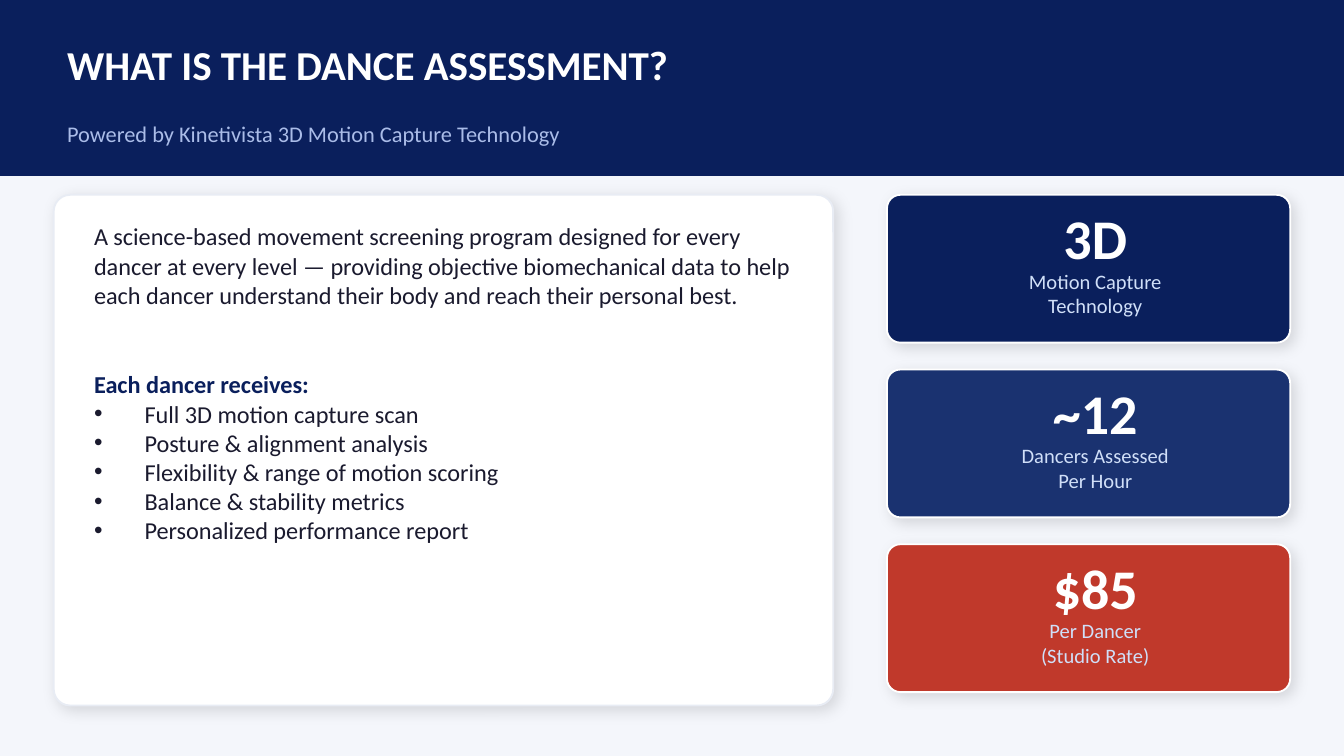
import lxml.etree
import pptx
import pptx.dml.color
import pptx.enum.shapes
import pptx.enum.text
import pptx.oxml.ns
import pptx.util

Pt = pptx.util.Pt
qn = pptx.oxml.ns.qn
SHAPE = pptx.enum.shapes.MSO_SHAPE
ALIGN = pptx.enum.text.PP_ALIGN
ANCHOR = pptx.enum.text.MSO_ANCHOR

COLORS = {
    "navy": "0A1F5C",
    "blue": "1A3270",
    "red": "C0392B",
    "white": "FFFFFF",
    "page": "F4F6FB",
    "border": "E8ECF4",
    "ink": "1A1A2E",
    "subtitle": "AABCE8",
    "caption": "D0DFF8",
    "shadow": "000000",
}
FONT = "Calibri"
RECEIVED = [
    "Full 3D motion capture scan",
    "Posture & alignment analysis",
    "Flexibility & range of motion scoring",
    "Balance & stability metrics",
    "Personalized performance report",
]
STATS = [
    ("3D", ["Motion Capture", "Technology"], "navy"),
    ("~12", ["Dancers Assessed", "Per Hour"], "blue"),
    ("$85", ["Per Dancer", "(Studio Rate)"], "red"),
]


def rgb(name):
    """Return the named palette colour."""
    return pptx.dml.color.RGBColor.from_string(COLORS[name])


def place(shape, box):
    """Move a shape to a box of left, top, width and height in points."""
    shape.left, shape.top, shape.width, shape.height = map(Pt, box)


def prepare_frame(shape, anchor=ANCHOR.TOP):
    """Make a wrapping text frame without margins or autofit."""
    frame = shape.text_frame
    frame.margin_left = frame.margin_top = frame.margin_right = frame.margin_bottom = 0
    frame.auto_size = pptx.enum.text.MSO_AUTO_SIZE.NONE
    frame.word_wrap = True
    frame.vertical_anchor = anchor
    return frame


def add_line(frame, index, text, size, color, bold=False, align=ALIGN.LEFT):
    """Write one paragraph with a single run."""
    para = frame.paragraphs[0] if index == 0 else frame.add_paragraph()
    para.alignment = align
    para.space_before = Pt(0)
    span = para.add_run()
    span.text = text
    span.font.name, span.font.size, span.font.bold = FONT, Pt(size), bold
    span.font.color.rgb = rgb(color)
    return para


def set_bullet(para, mark=None, indent=0):
    """Give a paragraph a hanging bullet, or none."""
    properties = para._p.get_or_add_pPr()
    properties.set("marL", str(Pt(indent)))
    properties.set("indent", str(-Pt(indent)))
    if mark:
        lxml.etree.SubElement(properties, qn("a:buChar"), char=mark)
    else:
        lxml.etree.SubElement(properties, qn("a:buNone"))


def add_text(page, box, lines, size, color, bold=False, align=ALIGN.LEFT, anchor=ANCHOR.TOP):
    """Add a text box with one paragraph for each line."""
    frame = prepare_frame(page.shapes.add_textbox(*map(Pt, box)), anchor)
    for index, text in enumerate(lines):
        add_line(frame, index, text, size, color, bold, align)


def add_panel(page, kind, box, fill, line):
    """Add a filled shape with a thin outline and no shadow."""
    panel = page.shapes.add_shape(kind, *map(Pt, box))
    panel.fill.solid()
    panel.fill.fore_color.rgb = rgb(fill)
    panel.line.color.rgb = rgb(line)
    panel.line.width = Pt(1)
    panel.shadow.inherit = False
    return panel


def add_card(page, box, fill, line, radius=8.8):
    """Add a rounded panel with a soft shadow."""
    card = add_panel(page, SHAPE.ROUNDED_RECTANGLE, box, fill, line)
    card.adjustments[0] = radius / min(box[2:])
    effects = card.element.spPr.find(qn("a:effectLst"))
    shadow = lxml.etree.SubElement(
        effects, qn("a:outerShdw"), blurRad=str(Pt(8)), dist=str(Pt(3)),
        dir=str(45 * 60000), algn="bl", rotWithShape="0")
    color = lxml.etree.SubElement(shadow, qn("a:srgbClr"), val=COLORS["shadow"])
    lxml.etree.SubElement(color, qn("a:alpha"), val="12000")


def raise_to_front(shape):
    """Move a shape above everything placed so far."""
    shape.element.getparent().append(shape.element)


def build_header(page, box):
    """Fill the header band with the title and its subtitle."""
    left, top, width, height = box
    add_panel(page, SHAPE.RECTANGLE, box, "navy", "navy")
    title = page.shapes.title
    raise_to_front(title)
    place(title, (left + 36, top + 7.2, width - 72, 54))
    add_line(prepare_frame(title, ANCHOR.MIDDLE), 0,
             "WHAT IS THE DANCE ASSESSMENT?", 22, "white", True)
    add_text(page, (left + 36, top + 57.6, width - 72, 27.36),
             ["Powered by Kinetivista 3D Motion Capture Technology"],
             12, "subtitle", anchor=ANCHOR.MIDDLE)


def build_overview(page, box):
    """Fill the main card with the introduction and the list."""
    left, top, width, height = box
    add_card(page, box, "white", "border")
    inner_left, inner_width = left + 21.6, width - 43.2
    add_text(page, (inner_left, top + 14.4, inner_width, 72), [
        "A science-based movement screening program designed for every dancer "
        "at every level — providing objective biomechanical data to help each "
        "dancer understand their body and reach their personal best."], 13, "ink")
    body = page.placeholders[1]
    raise_to_front(body)
    place(body, (inner_left, top + 93.6, inner_width, 165.6))
    frame = prepare_frame(body)
    set_bullet(add_line(frame, 0, "Each dancer receives:", 13, "navy", True))
    for index, text in enumerate(RECEIVED, 1):
        set_bullet(add_line(frame, index, text, 13, "ink"), "•", 27)


def build_stat(page, box, value, caption, fill):
    """Fill one stat card with its value and caption."""
    left, top, width, height = box
    add_card(page, box, fill, "white", 7.2)
    add_text(page, (left + 3.6, top + 2.88, width, 39.6), [value], 30, "white",
             True, ALIGN.CENTER, ANCHOR.MIDDLE)
    add_text(page, (left + 3.6, top + 39.6, width, 36), caption, 11, "caption",
             align=ALIGN.CENTER)


def main():
    """Build and save the slide."""
    deck = pptx.Presentation()
    deck.slide_width, deck.slide_height = Pt(720), Pt(405)
    page = deck.slides.add_slide(deck.slide_layouts[1])
    page.background.fill.solid()
    page.background.fill.fore_color.rgb = rgb("page")
    build_header(page, (0, 0, 720, 93.6))
    build_overview(page, (28.8, 104.4, 417.6, 273.6))
    for index, (value, caption, fill) in enumerate(STATS):
        build_stat(page, (475.2, 104.4 + 93.6 * index, 216, 79.2), value, caption, fill)
    deck.save("out.pptx")


if __name__ == "__main__":
    main()
